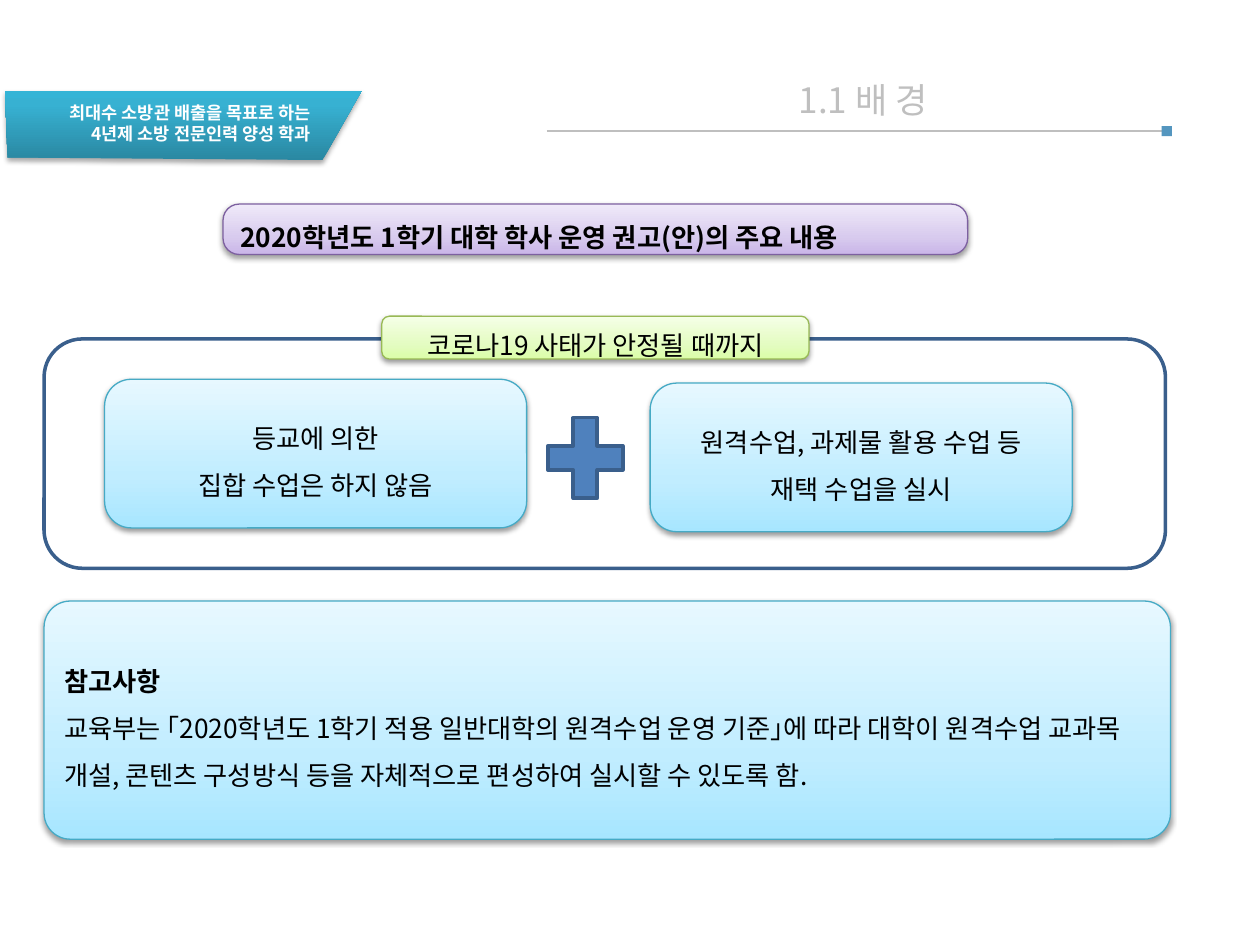
from copy import deepcopy

from lxml import etree
from pptx import Presentation
from pptx import util as u
from pptx.dml.color import RGBColor
from pptx.enum import shapes, text
from pptx.oxml.ns import qn

WHITE = RGBColor(0xFF, 0xFF, 0xFF)
BLACK = RGBColor(0x00, 0x00, 0x00)
GREY = RGBColor(0xBF, 0xBF, 0xBF)
MARKER = RGBColor(0x54, 0x96, 0xBF)
PLUS = RGBColor(0x4F, 0x81, 0xBD)
NAVY = RGBColor(0x3A, 0x5F, 0x8C)
PURPLE_EDGE = RGBColor(0x7D, 0x60, 0xA0)
BLUE_EDGE = RGBColor(0x46, 0xAA, 0xC5)
GREEN_EDGE = RGBColor(0x98, 0xB9, 0x55)
PURPLE = RGBColor(0xC9, 0xB5, 0xE8), RGBColor(0xD8, 0xCB, 0xEE), RGBColor(0xF0, 0xEA, 0xF9)
BLUE = RGBColor(0xA7, 0xE6, 0xFF), RGBColor(0xC1, 0xED, 0xFF), RGBColor(0xE7, 0xF8, 0xFF)
GREEN = RGBColor(0xDA, 0xFD, 0xA7), RGBColor(0xE4, 0xFC, 0xC2), RGBColor(0xF5, 0xFF, 0xE7)
TEAL = RGBColor(0x2A, 0x88, 0xA2), RGBColor(0x37, 0xB1, 0xD2), RGBColor(0x34, 0xB4, 0xD6)

LEFT, CENTER, RIGHT = text.PP_ALIGN.LEFT, text.PP_ALIGN.CENTER, text.PP_ALIGN.RIGHT
SHAPE = shapes.MSO_SHAPE


class Deck:
    font = "Noto Sans CJK KR"
    columns, rows = 100, 75

    def __init__(self, width, height):
        self.show = Presentation()
        self.show.slide_width, self.show.slide_height = u.Inches(width), u.Inches(height)
        self.column = self.show.slide_width / self.columns
        self.row = self.show.slide_height / self.rows
        self.slide = self.show.slides.add_slide(self.show.slide_layouts[6])

    def place(self, *lengths):
        return [round(length * unit) for length, unit in zip(lengths, (self.column, self.row) * 2)]

    def typeset(self, frame, lines, size, color, align, spacing=None, bold_lines=0):
        frame.word_wrap = True
        frame.text = "\n".join(lines)
        for index, paragraph in enumerate(frame.paragraphs):
            paragraph.alignment = align
            paragraph.line_spacing = spacing
            for run in paragraph.runs:
                run.font.name, run.font.size = self.font, u.Pt(size)
                run.font.bold = index < bold_lines
                run.font.color.rgb = color
                etree.SubElement(run.font._element, qn("a:ea"), typeface=self.font)

    def label(self, area, lines, size, color, align, bold_lines=0):
        frame = self.slide.shapes.add_textbox(*self.place(*area)).text_frame
        self.typeset(frame, lines, size, color, align, bold_lines=bold_lines)
        frame.auto_size = text.MSO_AUTO_SIZE.SHAPE_TO_FIT_TEXT

    def rule(self, start, end, color, width):
        line = self.slide.shapes.add_connector(
            shapes.MSO_CONNECTOR.STRAIGHT, *self.place(*start, *end))
        line.line.color.rgb, line.line.width = color, u.Pt(width)
        etree.SubElement(line._element.spPr, qn("a:effectLst"))

    def shape(self, kind, area, fill=None, edge=None, width=2):
        shape = self.slide.shapes.add_shape(kind, *self.place(*area))
        shape.shadow.inherit = False
        if fill is None:
            shape.fill.background()
        else:
            shape.fill.solid()
            shape.fill.fore_color.rgb = fill
        if edge is None:
            shape.line.fill.background()
        else:
            shape.line.color.rgb, shape.line.width = edge, u.Pt(width)
        return shape

    def shade(self, shape, colors, middle, opacity, distance):
        shape.fill.gradient()
        shape.fill.gradient_angle = 90
        stops = shape._element.spPr.find(".//" + qn("a:gsLst"))
        stops.append(deepcopy(stops[0]))
        for stop, color, position in zip(shape.fill.gradient_stops, colors, (0, middle, 1)):
            stop.color.rgb, stop.position = color, position
        shape.shadow.inherit = False
        effects = shape._element.spPr.find(qn("a:effectLst"))
        shadow = etree.SubElement(
            effects, qn("a:outerShdw"), blurRad=str(u.Pt(3.1)), dist=str(u.Pt(distance)),
            dir="5400000", rotWithShape="0")
        black = etree.SubElement(shadow, qn("a:srgbClr"), val=str(BLACK))
        etree.SubElement(black, qn("a:alpha"), val=str(opacity * 1000))

    def panel(self, area, corner, colors, edge, lines, align=CENTER, bold_lines=0):
        panel = self.shape(SHAPE.ROUNDED_RECTANGLE, area, edge=edge, width=0.75)
        panel.adjustments[0] = corner
        self.shade(panel, colors, 0.35, 38, 1.6)
        panel.text_frame.vertical_anchor = text.MSO_ANCHOR.MIDDLE
        self.typeset(panel.text_frame, lines, 15, BLACK, align, 1.5, bold_lines)

    def ribbon(self, corners, colors):
        start, *others = [self.place(*corner) for corner in corners]
        outline = self.slide.shapes.build_freeform(*start)
        outline.add_line_segments(others, close=True)
        ribbon = outline.convert_to_shape()
        ribbon.line.fill.background()
        self.shade(ribbon, colors, 0.8, 35, 1.8)


def main():
    deck = Deck(10, 7.5)

    deck.label((42.9, 5.7, 51.2, 4.4), ["1.1 배 경"], 20, GREY, CENTER)
    deck.rule((43.4, 10.4), (92.5, 10.4), GREY, 0.75)
    deck.shape(SHAPE.RECTANGLE, (92.2, 10, 0.8, 0.8), MARKER)

    deck.ribbon([(0.6, 12.5), (0.4, 7.2), (28.7, 7.2), (25.6, 12.7)], TEAL)
    deck.label((-0.4, 7.6, 26, 4.4),
               ["최대수 소방관 배출을 목표로 하는", "4년제 소방 전문인력 양성 학과"],
               10, WHITE, RIGHT, bold_lines=2)

    deck.panel((17.7, 16.2, 59.1, 4), 0.32, PURPLE, PURPLE_EDGE,
               ["2020학년도 1학기 대학 학사 운영 권고(안)의 주요 내용"], LEFT, 1)
    deck.panel((3.5, 47.7, 89.4, 18.9), 0.11, BLUE, BLUE_EDGE,
               ["참고사항",
                "교육부는 ｢2020학년도 1학기 적용 일반대학의 원격수업 운영 기준｣에 따라 대학이 "
                "원격수업 교과목 개설, 콘텐츠 구성방식 등을 자체적으로 편성하여 실시할 수 있도록 함."],
               LEFT, 1)

    deck.shape(SHAPE.ROUNDED_RECTANGLE, (3.5, 26.9, 89, 18.2), edge=NAVY)
    measures = [
        (8.3, 30.1, ["등교에 의한", "집합 수업은 하지 않음"]),
        (51.6, 30.4, ["원격수업, 과제물 활용 수업 등", "재택 수업을 실시"]),
    ]
    for left, top, lines in measures:
        deck.panel((left, top, 33.5, 11.8), 0.18, BLUE, BLUE_EDGE, lines)
    deck.panel((30.3, 25.1, 33.9, 3.4), 0.18, GREEN, GREEN_EDGE,
               ["코로나19 사태가 안정될 때까지"])
    deck.shape(SHAPE.MATH_PLUS, (42.4, 32, 8.1, 8.7), PLUS, NAVY)

    deck.show.save("out.pptx")


if __name__ == "__main__":
    main()
